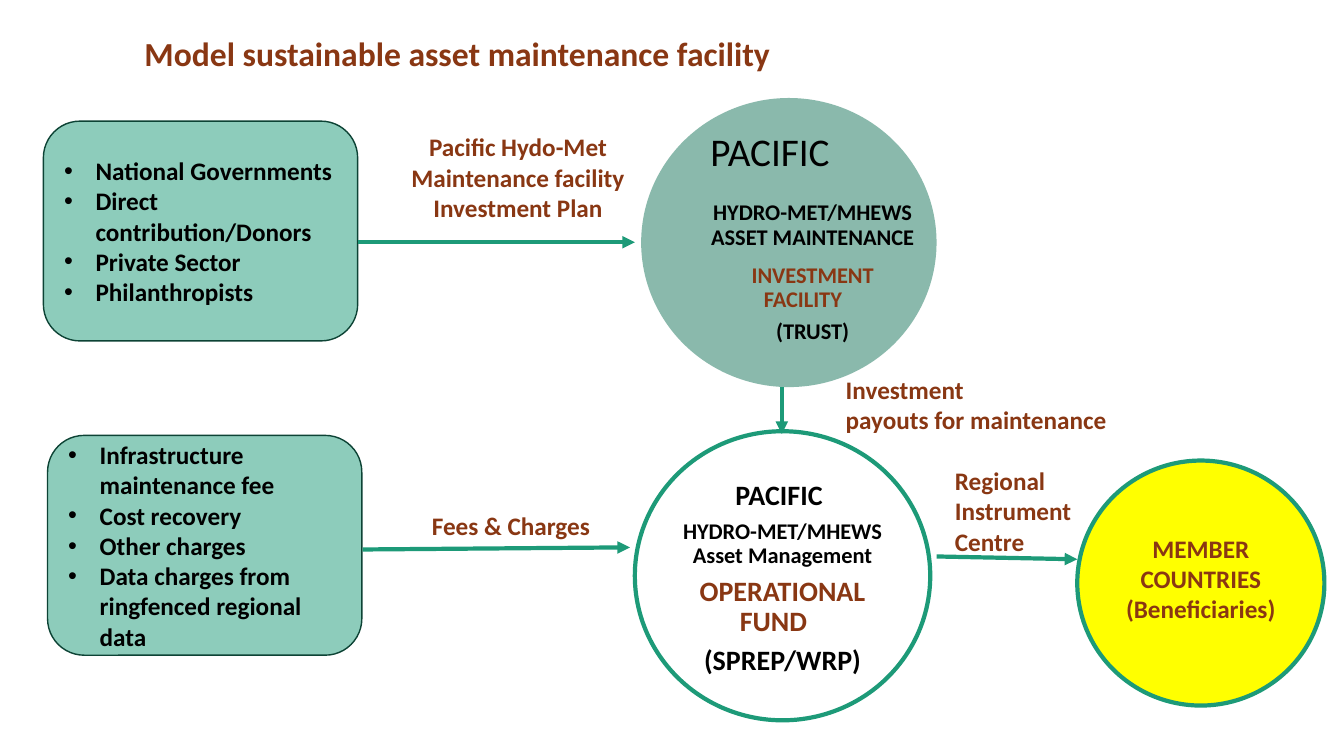
"""Build the slide showing a model sustainable asset maintenance facility."""
from dataclasses import dataclass

from lxml import etree
from pptx import Presentation
from pptx.dml.color import RGBColor
from pptx.enum.shapes import MSO_CONNECTOR, MSO_SHAPE
from pptx.enum.text import MSO_ANCHOR, MSO_AUTO_SIZE, PP_ALIGN
from pptx.oxml.ns import qn
from pptx.util import Pt

ELLIPSE, ROUNDED = MSO_SHAPE.OVAL, MSO_SHAPE.ROUNDED_RECTANGLE
STRAIGHT = MSO_CONNECTOR.STRAIGHT
LEFT, CENTER = PP_ALIGN.LEFT, PP_ALIGN.CENTER
TOP, MIDDLE = MSO_ANCHOR.TOP, MSO_ANCHOR.MIDDLE
NO_AUTOFIT = MSO_AUTO_SIZE.NONE


@dataclass(frozen=True)
class Theme:
    font: str = "Calibri"
    text: str = "000000"
    accent: str = "893713"
    green: str = "1D9A78"
    dark_green: str = "16745A"
    outline: str = "0D4335"
    yellow: str = "FFFF00"
    white: str = "FFFFFF"
    title: int = 24
    large: int = 28
    medium: int = 20
    body: int = 18
    small: int = 16
    stroke: int = 3


@dataclass
class Line:
    text: str
    size: int
    color: str
    after: float = 0
    right: float = 0
    bold: bool = True
    align: PP_ALIGN = CENTER


class FacilitySlide:
    def __init__(self, presentation, theme):
        self.theme = theme
        self.slide = presentation.slides.add_slide(presentation.slide_layouts[5])

    def style(self, paragraph, size, color, bold=True, align=LEFT):
        paragraph.alignment = align
        font = paragraph.font
        font.name, font.size, font.bold = self.theme.font, Pt(size), bold
        font.color.rgb = RGBColor.from_string(color)

    def paragraphs(self, frame, texts):
        frame.text = "\n".join(texts)
        return frame.paragraphs

    def title(self, text, box):
        shape = self.slide.shapes.title
        shape.left, shape.top, shape.width, shape.height = map(Pt, box)
        frame = shape.text_frame
        frame.text = text
        frame.auto_size, frame.word_wrap = NO_AUTOFIT, False
        frame.vertical_anchor = TOP
        self.style(frame.paragraphs[0], self.theme.title, self.theme.accent)

    def shape(self, kind, box, fill, line=None, width=1, alpha=None):
        shape = self.slide.shapes.add_shape(kind, *map(Pt, box))
        shape.shadow.inherit = False
        shape.fill.solid()
        shape.fill.fore_color.rgb = RGBColor.from_string(fill)
        if alpha:
            color = shape.fill._xPr.find(qn("a:solidFill"))[0]
            etree.SubElement(color, qn("a:alpha"), val=str(alpha * 1000))
        if line:
            shape.line.color.rgb = RGBColor.from_string(line)
            shape.line.width = Pt(width)
        else:
            shape.line.fill.background()
        return shape

    def bullet_card(self, box, items):
        theme = self.theme
        shape = self.shape(ROUNDED, box, theme.green, theme.outline, alpha=50)
        frame = shape.text_frame
        frame.word_wrap, frame.vertical_anchor = True, MIDDLE
        for paragraph in self.paragraphs(frame, items):
            properties = paragraph._p.get_or_add_pPr()
            properties.set("marL", str(Pt(22.5)))
            properties.set("indent", str(Pt(-22.5)))
            etree.SubElement(properties, qn("a:buFont"), typeface="Arial")
            etree.SubElement(properties, qn("a:buChar"), char="•")
            self.style(paragraph, theme.body, theme.text)

    def circle_text(self, box, lines):
        frame = self.slide.shapes.add_textbox(*map(Pt, box)).text_frame
        frame.word_wrap, frame.vertical_anchor = True, MIDDLE
        frame.margin_left = frame.margin_right = Pt(1.5)
        frame.margin_top = frame.margin_bottom = Pt(1.5)
        paragraphs = self.paragraphs(frame, [line.text for line in lines])
        for paragraph, line in zip(paragraphs, lines):
            paragraph.line_spacing = 0.9
            paragraph.space_after = Pt(line.after)
            paragraph._p.get_or_add_pPr().set("marR", str(Pt(line.right)))
            self.style(paragraph, line.size, line.color, line.bold, line.align)

    def member_circle(self, box, texts):
        theme = self.theme
        shape = self.shape(ELLIPSE, box, theme.yellow, theme.green, theme.stroke)
        frame = shape.text_frame
        frame.word_wrap, frame.vertical_anchor = True, MIDDLE
        frame.margin_bottom = Pt(10)
        for paragraph in self.paragraphs(frame, texts):
            self.style(paragraph, theme.body, theme.accent, align=CENTER)

    def caption(self, box, texts, align=LEFT):
        frame = self.slide.shapes.add_textbox(*map(Pt, box)).text_frame
        frame.word_wrap = True
        for paragraph in self.paragraphs(frame, texts):
            self.style(paragraph, self.theme.body, self.theme.accent, align=align)

    def arrow(self, start, end):
        connector = self.slide.shapes.add_connector(STRAIGHT, *map(Pt, start + end))
        connector.line.color.rgb = RGBColor.from_string(self.theme.green)
        connector.line.width = Pt(self.theme.stroke)
        etree.SubElement(connector.line._get_or_add_ln(), qn("a:tailEnd"), type="triangle")
        etree.SubElement(connector._element.spPr, qn("a:effectLst"))


def main():
    presentation = Presentation()
    presentation.slide_width, presentation.slide_height = Pt(960), Pt(540)
    theme = Theme()
    page = FacilitySlide(presentation, theme)
    page.title("Model sustainable asset maintenance facility", (96, 20, 464, 36))

    page.shape(ELLIPSE, (458, 70, 211, 206.5), theme.dark_green, alpha=50)
    page.circle_text((506, 79, 149, 183), [
        Line("PACIFIC", theme.large, theme.text, 19, bold=False, align=LEFT),
        Line("HYDRO-MET/MHEWS ASSET MAINTENANCE", theme.small, theme.text, 10),
        Line("INVESTMENT", theme.small, theme.accent),
        Line("FACILITY", theme.small, theme.accent, 6, right=14),
        Line("(TRUST)", theme.small, theme.text),
    ])
    page.shape(ELLIPSE, (453.5, 308, 211, 206.5), theme.white, theme.green, theme.stroke)
    page.circle_text((484.5, 324, 149, 179), [
        Line("PACIFIC", theme.medium, theme.text, 6, right=5),
        Line("HYDRO-MET/MHEWS Asset Management", theme.small, theme.text, 6),
        Line("OPERATIONAL", theme.medium, theme.accent),
        Line("FUND", theme.medium, theme.accent, 6, right=13),
        Line("(SPREP/WRP)", theme.medium, theme.text),
    ])

    page.bullet_card((31, 86.5, 224.5, 157), [
        "National Governments", "Direct contribution/Donors",
        "Private Sector", "Philanthropists"])
    page.bullet_card((34, 311, 224.5, 157), [
        "Infrastructure maintenance fee", "Cost recovery", "Other charges",
        "Data charges from ringfenced regional data"])
    page.member_circle((769.5, 329, 176.5, 175), ["MEMBER COUNTRIES", "(Beneficiaries)"])

    for start, end in [
        ((558.5, 276.5), (558.5, 310)),
        ((255.5, 173), (453.5, 173)),
        ((259, 392.5), (450, 391)),
        ((669, 397.5), (769.5, 399.5)),
    ]:
        page.arrow(start, end)

    page.caption((597, 263.5, 223, 51), ["Investment", "payouts for maintenance"])
    page.caption((675, 329, 102, 73), ["Regional", "Instrument", "Centre"])
    page.caption((284, 90.5, 172, 73), [
        "Pacific Hydo-Met", "Maintenance facility", "Investment Plan"], CENTER)
    page.caption((286, 361, 158, 29), ["Fees & Charges"], CENTER)

    presentation.save("out.pptx")


if __name__ == "__main__":
    main()
